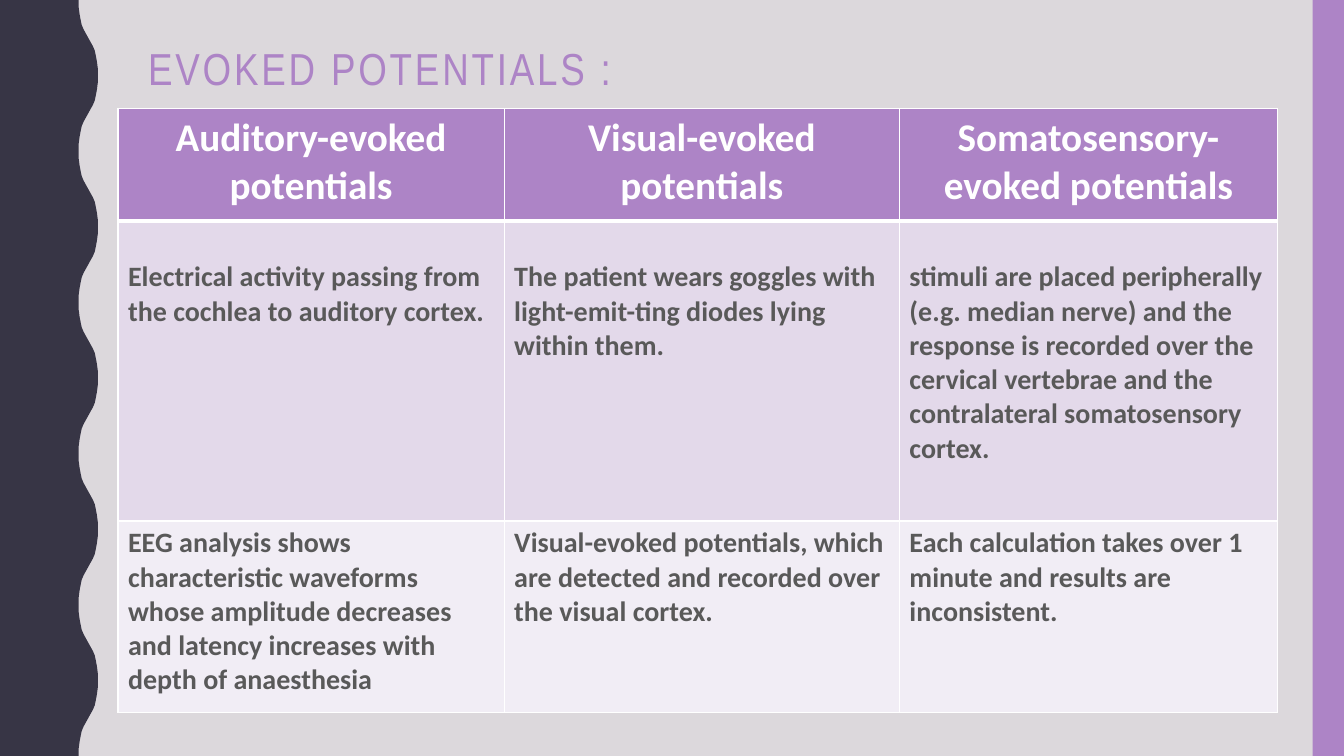
from dataclasses import dataclass
from typing import NamedTuple

from lxml.etree import SubElement
from pptx import Presentation
from pptx.dml.color import RGBColor as RGB
from pptx.enum.shapes import MSO_SHAPE as SHAPE
from pptx.enum.text import MSO_ANCHOR as ANCHOR, PP_ALIGN as ALIGN
from pptx.oxml.ns import qn
from pptx.util import Inches, Pt

W, H = Inches(13.33), Inches(7.5)


@dataclass(frozen=True)
class Theme:
    background: str = "DCD8DC"
    dark: str = "373545"
    accent: str = "AD84C6"
    white: str = "FFFFFF"
    body: str = "595959"
    band_dark: str = "E3D9EA"
    band_light: str = "F1EDF5"
    title_font: str = "Arial Narrow"
    table_font: str = "Calibri"
    title_size: int = 32
    header_size: int = 28
    body_size: int = 20
    thin: int = 1
    thick: int = 3


THEME = Theme()


class Box(NamedTuple):
    """A frame in percent of the slide's width and height."""
    left: float
    top: float
    width: float
    height: float


class TableRow(NamedTuple):
    height: float
    texts: tuple[str, str, str]
    fill: str
    color: str
    size: int
    align: ALIGN = ALIGN.LEFT
    pad_top: float = 0.67
    rule_below: int = THEME.thin


TITLE = Box(10.28, 5.6, 83.5, 21.73)
TABLE = Box(8.78, 14.4, 86.27, 79.86)
RIGHT_BAR = Box(97.67, 0, 2.33, 100)
COLUMNS = (28.73, 29.41, 28.13)
ROWS = (
    TableRow(14.8, ("Auditory-evoked potentials", "Visual-evoked potentials",
                    "Somatosensory-evoked potentials"),
             THEME.accent, THEME.white, THEME.header_size, ALIGN.CENTER,
             rule_below=THEME.thick),
    TableRow(39.73, (
        "Electrical activity passing from the cochlea to auditory cortex.",
        "The patient wears goggles with light-emit-ting diodes lying within them.",
        "stimuli are placed peripherally (e.g. median nerve) and the response is "
        "recorded over the cervical vertebrae and the contralateral "
        "somatosensory cortex."),
        THEME.band_dark, THEME.body, THEME.body_size, pad_top=5.2),
    TableRow(25.33, (
        "EEG analysis shows characteristic waveforms whose amplitude decreases "
        "and latency increases with depth of anaesthesia",
        "Visual-evoked potentials, which are detected and recorded over the "
        "visual cortex.",
        "Each calculation takes over 1 minute and results are inconsistent."),
        THEME.band_light, THEME.body, THEME.body_size),
)

# Wave edge: trough and crest in percent of width, half a wave in percent of height
TROUGH, CREST, HALF_WAVE = 5.85, 7.28, 10
# First half of the rise from trough to crest, as (depth, distance) shares
RISE = ((0, 0), (0, 0.09), (0.05, 0.19), (0.11, 0.27),
        (0.16, 0.33), (0.26, 0.39), (0.37, 0.44), (0.5, 0.5))


def px(share: float) -> int:
    """Percent of the slide's width as a length."""
    return round(W * share / 100)


def py(share: float) -> int:
    """Percent of the slide's height as a length."""
    return round(H * share / 100)


def frame(box: Box) -> tuple[int, int, int, int]:
    return px(box.left), py(box.top), px(box.width), py(box.height)


def paint(fill, color: str) -> None:
    fill.solid()
    fill.fore_color.rgb = RGB.from_string(color)


def style_shape(sp, color: str) -> None:
    sp.shadow.inherit = False
    paint(sp.fill, color)
    sp.line.fill.background()


def write(p, text: str, color: str, **fmt):
    r = p.add_run()
    r.text = text
    for name, value in fmt.items():
        setattr(r.font, name, value)
    r.font.color.rgb = RGB.from_string(color)
    return r


def add_wave(s) -> None:
    rise = RISE + tuple((1 - x, 1 - y) for x, y in RISE[-2::-1])
    points = [(px(TROUGH), 0)]
    for i in range(100 // HALF_WAVE):
        for depth, along in rise[1:]:
            out = 1 - depth if i % 2 else depth
            points.append((px(TROUGH + out * (CREST - TROUGH)),
                           py((i + along) * HALF_WAVE)))
    builder = s.shapes.build_freeform(0, 0, scale=1.0)
    builder.add_line_segments(points + [(0, H)], close=True)
    style_shape(builder.convert_to_shape(), THEME.dark)


def add_title(s) -> None:
    tf = s.shapes.add_textbox(*frame(TITLE)).text_frame
    tf.word_wrap = True
    tf.vertical_anchor = ANCHOR.TOP
    p = tf.paragraphs[0]
    p.line_spacing = 0.9
    r = write(p, "EVOKED POTENTIALS :", THEME.accent,
              name=THEME.title_font, size=Pt(THEME.title_size))
    r.font._element.set("spc", "200")


def add_borders(cell, widths: dict[str, int]) -> None:
    tcPr = cell._tc.get_or_add_tcPr()
    for side, width in widths.items():
        ln = SubElement(tcPr, qn(f"a:ln{side}"), w=str(Pt(width)))
        fill = SubElement(ln, qn("a:solidFill"))
        SubElement(fill, qn("a:srgbClr"), val=THEME.white)


def fill_cell(cell, text: str, row: TableRow, rule_above: int) -> None:
    add_borders(cell, {"L": THEME.thin, "R": THEME.thin,
                       "T": rule_above, "B": row.rule_below})
    paint(cell.fill, row.fill)
    cell.margin_top = py(row.pad_top)
    p = cell.text_frame.paragraphs[0]
    p.alignment = row.align
    write(p, text, row.color, name=THEME.table_font, size=Pt(row.size), bold=True)


def add_evoked_table(s) -> None:
    table = s.shapes.add_table(len(ROWS), len(COLUMNS), *frame(TABLE)).table
    for column, width in zip(table.columns, COLUMNS):
        column.width = px(width)
    rule_above = THEME.thin
    for i, row in enumerate(ROWS):
        table.rows[i].height = py(row.height)
        for j, text in enumerate(row.texts):
            fill_cell(table.cell(i, j), text, row, rule_above)
        rule_above = row.rule_below


def main() -> None:
    prs = Presentation()
    prs.slide_width, prs.slide_height = W, H
    s = prs.slides.add_slide(prs.slide_layouts[6])
    paint(s.background.fill, THEME.background)
    add_wave(s)
    style_shape(s.shapes.add_shape(SHAPE.RECTANGLE, *frame(RIGHT_BAR)), THEME.accent)
    add_title(s)
    add_evoked_table(s)
    prs.save("out.pptx")


if __name__ == "__main__":
    main()
